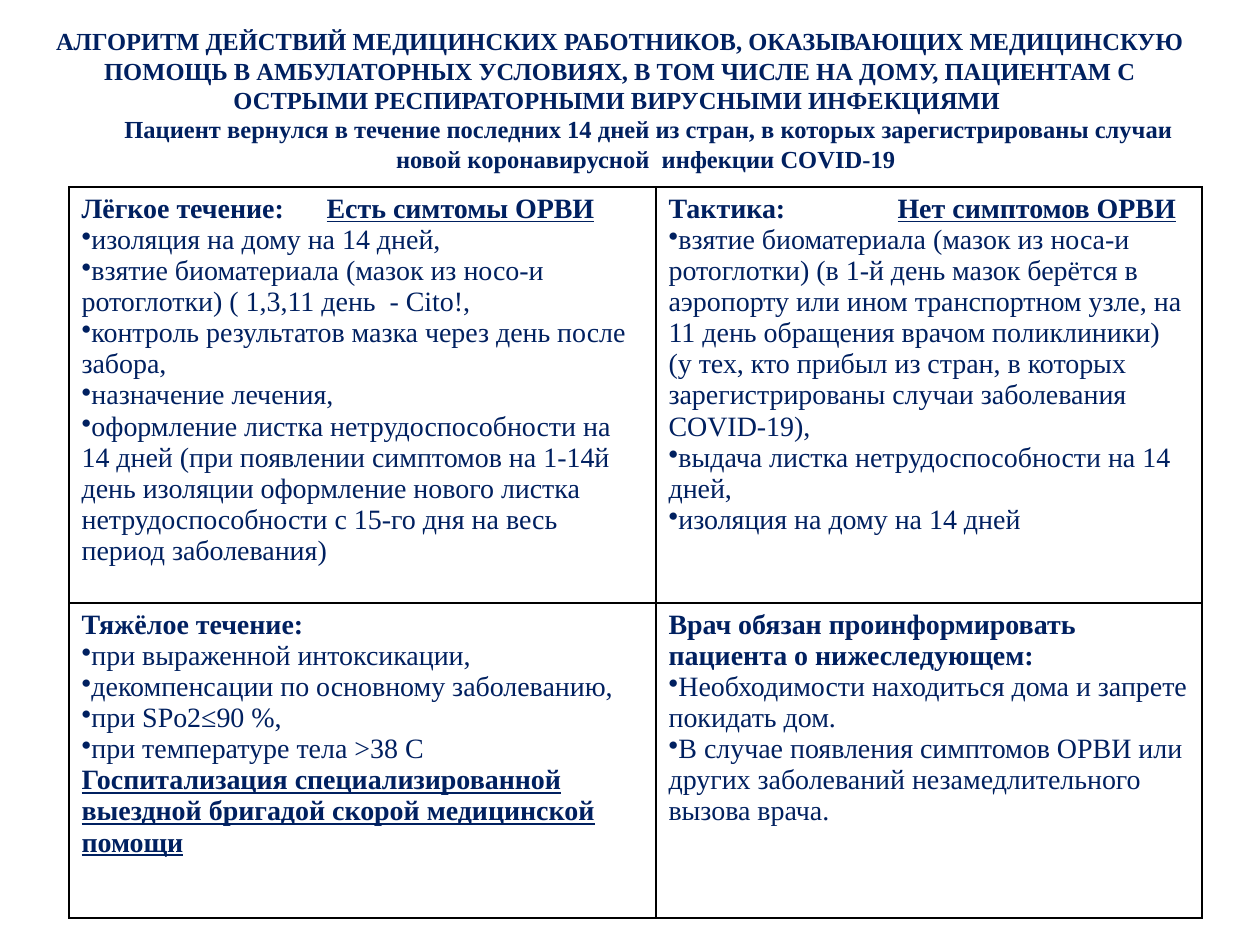
from dataclasses import dataclass

from lxml import etree
from pptx import Presentation
from pptx.dml.color import RGBColor
from pptx.enum.text import MSO_ANCHOR, MSO_AUTO_SIZE, PP_ALIGN
from pptx.oxml.ns import qn
from pptx.util import Emu, Pt

CENTER = PP_ALIGN.CENTER
TOP = MSO_ANCHOR.TOP
NO_FIT = MSO_AUTO_SIZE.NONE
EMU_PER_INCH = 914400
PX_PER_INCH = 126
TITLE_ONLY = 5


@dataclass(frozen=True)
class Theme:
    font: str = "Times New Roman"
    ink: str = "002060"
    border: str = "000000"
    heading: Pt = Pt(14)
    body: Pt = Pt(16)
    border_width: Pt = Pt(1)


@dataclass(frozen=True)
class Box:
    left: int
    top: int
    width: int
    height: int


@dataclass(frozen=True)
class Panel:
    heading: str
    items: tuple[str, ...]
    note: str = ""  # underlined, beside the heading
    note_offset: int = 0
    closing: str = ""


THEME = Theme()
TITLE_BOX = Box(29, 20, 1182, 102)
SUBTITLE_BOX = Box(108, 108, 1082, 72)
TABLE_BOX = Box(69, 187, 1133, 731)
COLUMN_WIDTHS = (587, 546)
ROW_HEIGHTS = (416, 315)

TITLE = (
    "АЛГОРИТМ ДЕЙСТВИЙ МЕДИЦИНСКИХ РАБОТНИКОВ, ОКАЗЫВАЮЩИХ МЕДИЦИНСКУЮ "
    "ПОМОЩЬ В АМБУЛАТОРНЫХ УСЛОВИЯХ, В ТОМ ЧИСЛЕ НА ДОМУ, ПАЦИЕНТАМ С "
    "ОСТРЫМИ РЕСПИРАТОРНЫМИ ВИРУСНЫМИ ИНФЕКЦИЯМИ "
)
SUBTITLE = (
    "Пациент вернулся в течение последних 14 дней из стран, в которых "
    "зарегистрированы случаи новой коронавирусной  инфекции COVID-19 "
)
PANELS = (
    (
        Panel(
            "Лёгкое течение:",
            (
                "изоляция на дому на 14 дней,",
                "взятие биоматериала (мазок из носо-и ротоглотки) "
                "( 1,3,11 день  - Cito!,",
                "контроль результатов мазка через день после забора,",
                "назначение лечения,",
                "оформление листка нетрудоспособности на 14 дней (при появлении "
                "симптомов на 1-14й день изоляции оформление нового листка "
                "нетрудоспособности с 15-го дня на весь период заболевания)",
            ),
            note="Есть симтомы ОРВИ",
            note_offset=245,
        ),
        Panel(
            "Тактика:",
            (
                "взятие биоматериала (мазок из носа-и ротоглотки) (в 1-й день "
                "мазок берётся в аэропорту или ином транспортном узле, на 11 день "
                "обращения врачом поликлиники) (у тех, кто прибыл из стран, в "
                "которых зарегистрированы случаи заболевания COVID-19),",
                "выдача листка нетрудоспособности на 14 дней,",
                "изоляция на дому на 14 дней",
            ),
            note="Нет симптомов ОРВИ",
            note_offset=229,
        ),
    ),
    (
        Panel(
            "Тяжёлое течение:",
            (
                "при выраженной интоксикации,",
                "декомпенсации по основному заболеванию,",
                "при SPo2≤90 %,",
                "при температуре тела >38 C",
            ),
            closing="Госпитализация специализированной выездной бригадой "
            "скорой медицинской помощи",
        ),
        Panel(
            "Врач обязан проинформировать пациента о нижеследующем:",
            (
                "Необходимости находиться дома и запрете покидать дом.",
                "В случае появления симптомов ОРВИ или других заболеваний "
                "незамедлительного вызова врача.",
            ),
        ),
    ),
)


def px(length: int) -> Emu:
    return Emu(round(length * EMU_PER_INCH / PX_PER_INCH))


def frame(box: Box) -> tuple[Emu, Emu, Emu, Emu]:
    return px(box.left), px(box.top), px(box.width), px(box.height)


def style(para, size: Pt, bold: bool = False) -> None:
    para.font.name = THEME.font
    para.font.size = size
    para.font.bold = bold
    para.font.color.rgb = RGBColor.from_string(THEME.ink)


def write_heading(shape, box: Box, text: str) -> None:
    shape.left, shape.top, shape.width, shape.height = frame(box)
    text_frame = shape.text_frame
    text_frame.word_wrap = True
    text_frame.auto_size = NO_FIT
    text_frame.vertical_anchor = TOP
    para = text_frame.paragraphs[0]
    para.text = text
    para.alignment = CENTER
    style(para, THEME.heading, bold=True)


def add_bullet(para) -> None:
    properties = para._p.get_or_add_pPr()
    properties.set("marL", "0")
    properties.set("indent", "0")
    etree.SubElement(properties, qn("a:buChar"), char="•")


def add_tab(para, offset: int) -> None:
    tabs = etree.SubElement(para._p.get_or_add_pPr(), qn("a:tabLst"))
    etree.SubElement(tabs, qn("a:tab"), pos=str(px(offset)), algn="l")


def add_underlined(para, text: str) -> None:
    span = para.add_run()
    span.text = text
    span.font.underline = True


def set_borders(cell) -> None:
    properties = cell._tc.get_or_add_tcPr()
    for index, side in enumerate(("lnL", "lnR", "lnT", "lnB")):
        line = etree.Element(qn(f"a:{side}"), w=str(THEME.border_width))
        fill = etree.SubElement(line, qn("a:solidFill"))
        etree.SubElement(fill, qn("a:srgbClr"), val=THEME.border)
        properties.insert(index, line)


def fill_cell(cell, panel: Panel) -> None:
    cell.fill.background()
    set_borders(cell)
    text_frame = cell.text_frame
    heading = text_frame.paragraphs[0]
    heading.add_run().text = panel.heading
    if panel.note:
        add_tab(heading, panel.note_offset)
        heading.add_run().text = "\t"
        add_underlined(heading, panel.note)
    style(heading, THEME.body, bold=True)
    for item in panel.items:
        para = text_frame.add_paragraph()
        para.text = item
        add_bullet(para)
        style(para, THEME.body)
    if panel.closing:
        para = text_frame.add_paragraph()
        add_underlined(para, panel.closing)
        style(para, THEME.body, bold=True)


def add_panels(page) -> None:
    table = page.shapes.add_table(
        len(ROW_HEIGHTS), len(COLUMN_WIDTHS), *frame(TABLE_BOX)
    ).table
    table.first_row = False
    table.horz_banding = False
    for column, width in zip(table.columns, COLUMN_WIDTHS):
        column.width = px(width)
    for row, height, panels in zip(table.rows, ROW_HEIGHTS, PANELS):
        row.height = px(height)
        for cell, panel in zip(row.cells, panels):
            fill_cell(cell, panel)


def main() -> None:
    deck = Presentation()
    deck.slide_width, deck.slide_height = px(1260), px(945)
    page = deck.slides.add_slide(deck.slide_layouts[TITLE_ONLY])
    add_panels(page)
    write_heading(page.shapes.title, TITLE_BOX, TITLE)
    subtitle = page.shapes.add_textbox(*frame(SUBTITLE_BOX))
    write_heading(subtitle, SUBTITLE_BOX, SUBTITLE)
    deck.save("out.pptx")


if __name__ == "__main__":
    main()
